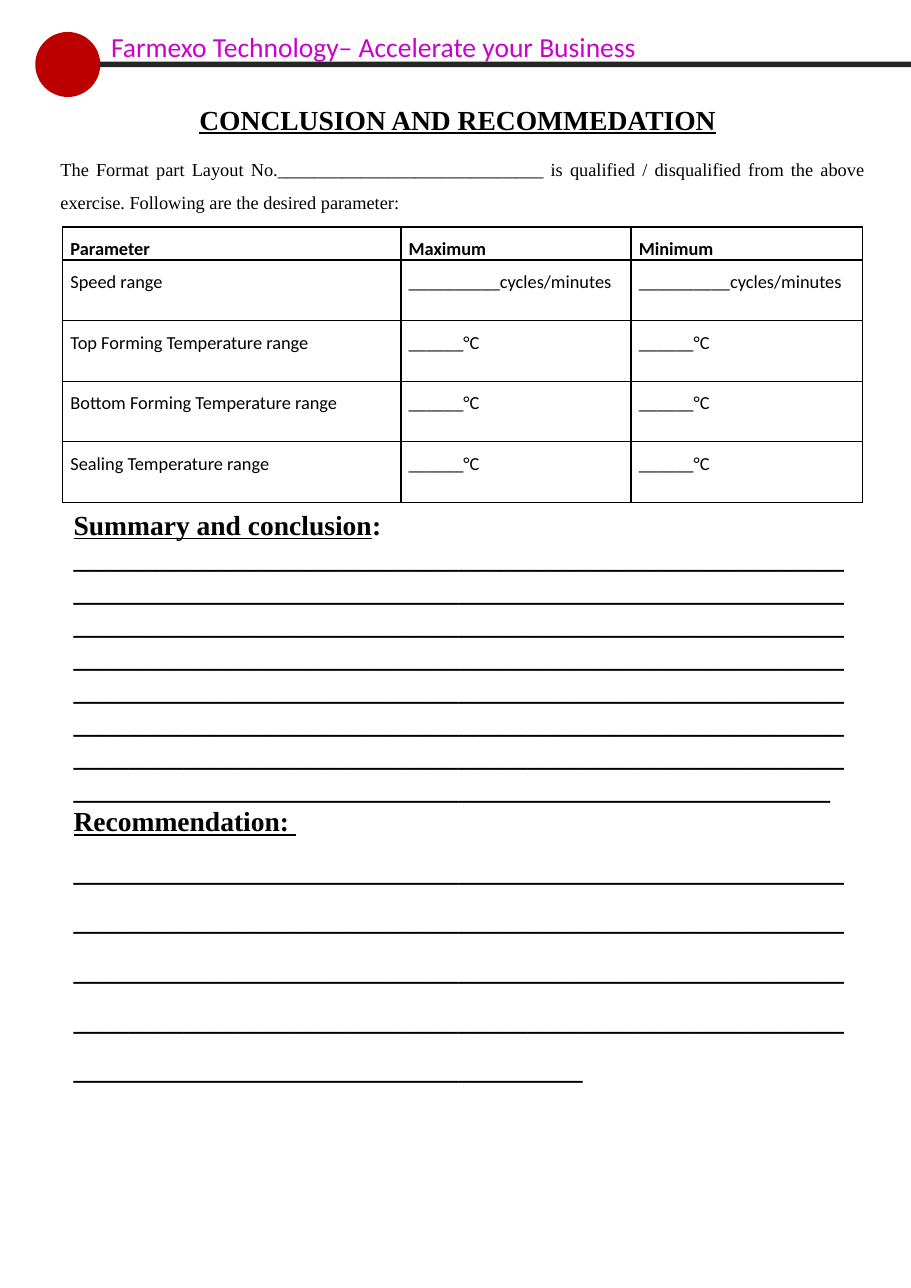
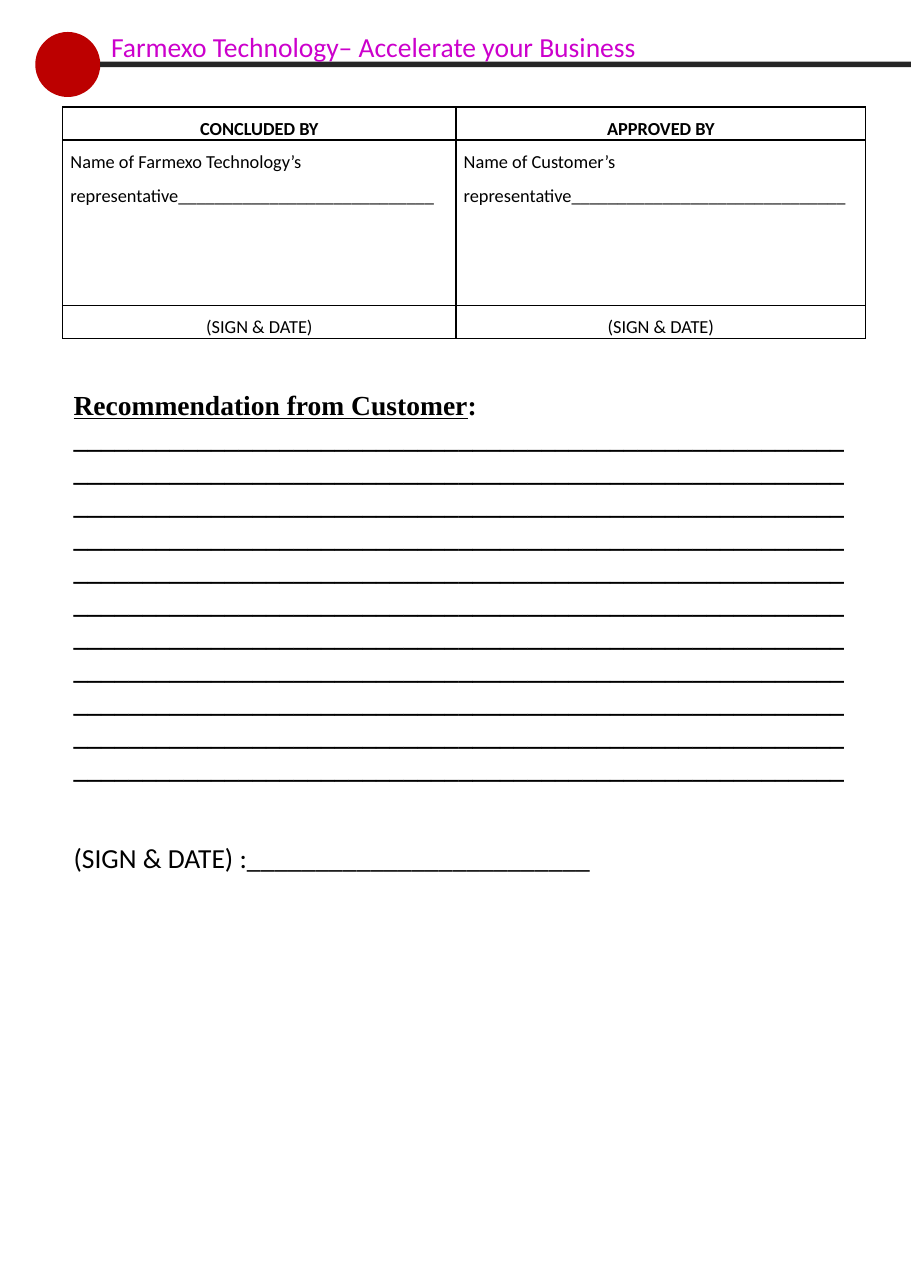
from lxml import etree
from pptx import Presentation
from pptx.dml.color import RGBColor
from pptx.enum.shapes import MSO_SHAPE
from pptx.enum.text import MSO_ANCHOR, MSO_AUTO_SIZE, PP_ALIGN
from pptx.oxml.ns import qn
from pptx.util import Pt

PX = 9144  # EMU in one px, 100 px to the inch
PAGE_WIDTH, PAGE_HEIGHT = 827, 1169
TITLE_ONLY, BLANK = 5, 6

BLACK = RGBColor(0x00, 0x00, 0x00)
WHITE = RGBColor(0xFF, 0xFF, 0xFF)
RED = RGBColor(0xBC, 0x00, 0x00)
CHARCOAL = RGBColor(0x26, 0x26, 0x26)
MAGENTA = RGBColor(0xCC, 0x00, 0xCC)

SLOGAN = {"name": "Calibri", "size": Pt(18)}
HEADING = {"name": "Times New Roman", "size": Pt(18), "bold": True, "underline": True}
RULED = {**HEADING, "underline": False}
BODY = {"name": "Times New Roman", "size": Pt(12)}
CELL = {"name": "Calibri", "size": Pt(12), "bold": False}
CELL_HEAD = {**CELL, "bold": True}

LEFT = {"alignment": PP_ALIGN.LEFT}
LEFT_OPEN = {"alignment": PP_ALIGN.LEFT, "line_spacing": 1.5}
CENTER_OPEN = {"alignment": PP_ALIGN.CENTER, "line_spacing": 1.5}
JUSTIFIED_OPEN = {"alignment": PP_ALIGN.JUSTIFY, "line_spacing": 1.5}

MARGIN = 57
BLANKS_PER_LINE = 56


def px(*lengths):
    return [length * PX for length in lengths]


def apply(target, values):
    for name, value in values.items():
        setattr(target, name, value)


class Report:
    def __init__(self):
        self.deck = Presentation()
        self.deck.slide_width, self.deck.slide_height = px(PAGE_WIDTH, PAGE_HEIGHT)
        self.slide = None

    def page(self, layout):
        self.slide = self.deck.slides.add_slide(self.deck.slide_layouts[layout])
        emblem = self.slide.shapes.add_group_shape()
        self.block(emblem, MSO_SHAPE.OVAL, (32, 29, 59, 59), RED)
        self.block(emblem, MSO_SHAPE.RECTANGLE, (91, 56, 736, 5), CHARCOAL)
        self.text((91, 22, 674, 40),
                  [(LEFT, [("Farmexo Technology– Accelerate your Business", SLOGAN)])], MAGENTA)

    def block(self, group, preset, box, color):
        shape = group.shapes.add_shape(preset, *px(*box))
        shape.shadow.inherit = False
        shape.fill.solid()
        shape.fill.fore_color.rgb = color
        shape.line.fill.background()

    def fill_frame(self, frame, paragraphs, color=BLACK):
        """Fill a text frame with (paragraph format, [(text, font format)]) pairs."""
        for index, (layout, runs) in enumerate(paragraphs):
            paragraph = frame.add_paragraph() if index else frame.paragraphs[0]
            apply(paragraph, layout)
            for words, style in runs:
                run = paragraph.add_run()
                run.text = words
                apply(run.font, style)
                run.font.color.rgb = color

    def text(self, box, paragraphs, color=BLACK):
        frame = self.slide.shapes.add_textbox(*px(*box)).text_frame
        apply(frame, {"word_wrap": True, "auto_size": MSO_AUTO_SIZE.SHAPE_TO_FIT_TEXT})
        self.fill_frame(frame, paragraphs, color)

    def title(self, words, box):
        title = self.slide.shapes.title
        apply(title, dict(zip(("left", "top", "width", "height"), px(*box))))
        apply(title.text_frame, {"word_wrap": True, "auto_size": MSO_AUTO_SIZE.NONE,
                                 "vertical_anchor": MSO_ANCHOR.TOP})
        self.fill_frame(title.text_frame, [(LEFT, [(words, HEADING)])])

    def ruled_section(self, box, heading, blanks, spacing):
        """Heading followed by a run of blanks that wraps into writing lines."""
        self.text(box, [(JUSTIFIED_OPEN, heading), (spacing, [("_" * blanks, RULED)])])

    def table(self, top, widths, heights, rows, centered_rows=()):
        table = self.slide.shapes.add_table(
            len(rows), len(widths), *px(MARGIN, top, sum(widths), sum(heights))).table
        apply(table, {"first_row": False, "horz_banding": False})
        for column, width in zip(table.columns, px(*widths)):
            column.width = width
        for r, (row, height) in enumerate(zip(rows, px(*heights))):
            table.rows[r].height = height
            layout = CENTER_OPEN if r in centered_rows else LEFT_OPEN
            for c, words in enumerate(row):
                cell = table.cell(r, c)
                apply(cell, {"margin_left": 7 * PX, "margin_right": 7 * PX,
                             "margin_top": 0, "margin_bottom": 0})
                cell.fill.solid()
                cell.fill.fore_color.rgb = WHITE
                self.border(cell)
                self.fill_frame(cell.text_frame,
                                [(layout, [(words, CELL if r else CELL_HEAD)])])

    def border(self, cell):
        properties = cell._tc.get_or_add_tcPr()
        for index, side in enumerate(("lnL", "lnR", "lnT", "lnB")):
            line = etree.Element(qn(f"a:{side}"), w=str(Pt(1)))
            fill = etree.SubElement(line, qn("a:solidFill"))
            etree.SubElement(fill, qn("a:srgbClr"), val=str(BLACK))
            properties.insert(index, line)


def conclusion_page(report):
    report.page(TITLE_ONLY)
    report.title("CONCLUSION AND RECOMMEDATION", (171, 88, 512, 40))
    intro = ("The Format part Layout No." + "_" * 29 + " is qualified / disqualified from "
             "the above exercise. Following are the desired parameter:")
    report.text((45, 129, 751, 67), [(JUSTIFIED_OPEN, [(intro, BODY)])])

    speed = "_" * 10 + "cycles/minutes"
    temperature = "_" * 6 + "°C"
    ranges = [("Speed range", speed, speed)]
    ranges += [(f"{stage} Temperature range", temperature, temperature)
               for stage in ("Top Forming", "Bottom Forming", "Sealing")]
    report.table(206, (307, 209, 210), [30] + [55] * len(ranges),
                 [("Parameter", "Maximum", "Minimum")] + ranges)

    report.ruled_section((MARGIN, 441, 726, 298),
                         [("Summary and conclusion", HEADING), (":", RULED)],
                         8 * BLANKS_PER_LINE - 1, {})
    report.ruled_section((MARGIN, 710, 726, 277), [("Recommendation: ", HEADING)],
                         4 * BLANKS_PER_LINE + 37, JUSTIFIED_OPEN)


def approval_page(report):
    report.page(BLANK)
    sign = "(SIGN & DATE)"
    report.table(97, (357, 372), (30, 150, 30),
                 [("CONCLUDED BY", "APPROVED BY"),
                  ("Name of Farmexo Technology’s representative" + "_" * 28,
                   "Name of Customer’s representative" + "_" * 30),
                  (sign, sign)],
                 centered_rows=(0, 2))
    report.ruled_section((MARGIN, 332, 730, 389),
                         [("Recommendation from Customer", HEADING), (":", RULED)],
                         11 * BLANKS_PER_LINE, {})
    report.text((MARGIN, 743, 600, 51), [(LEFT_OPEN, [(f"{sign} :" + "_" * 25, SLOGAN)])])


def main():
    report = Report()
    conclusion_page(report)
    approval_page(report)
    report.deck.save("out.pptx")


if __name__ == "__main__":
    main()
